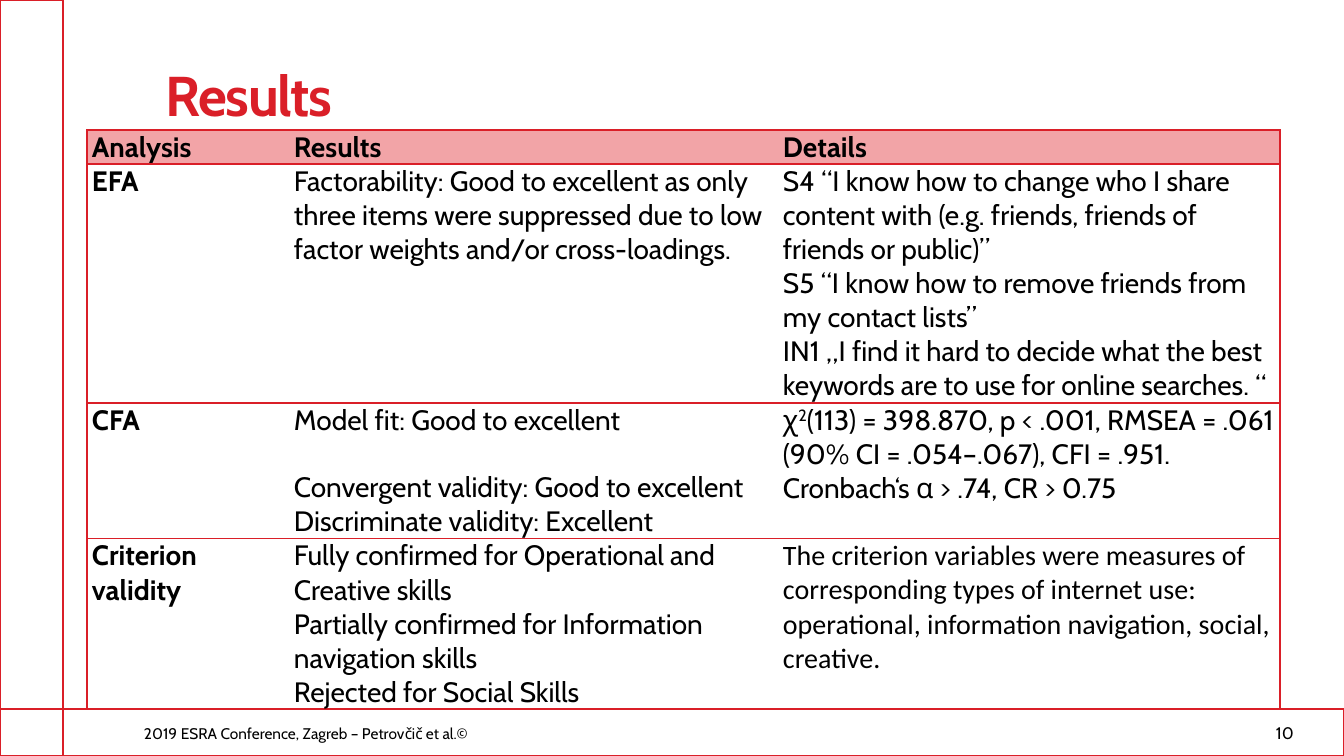
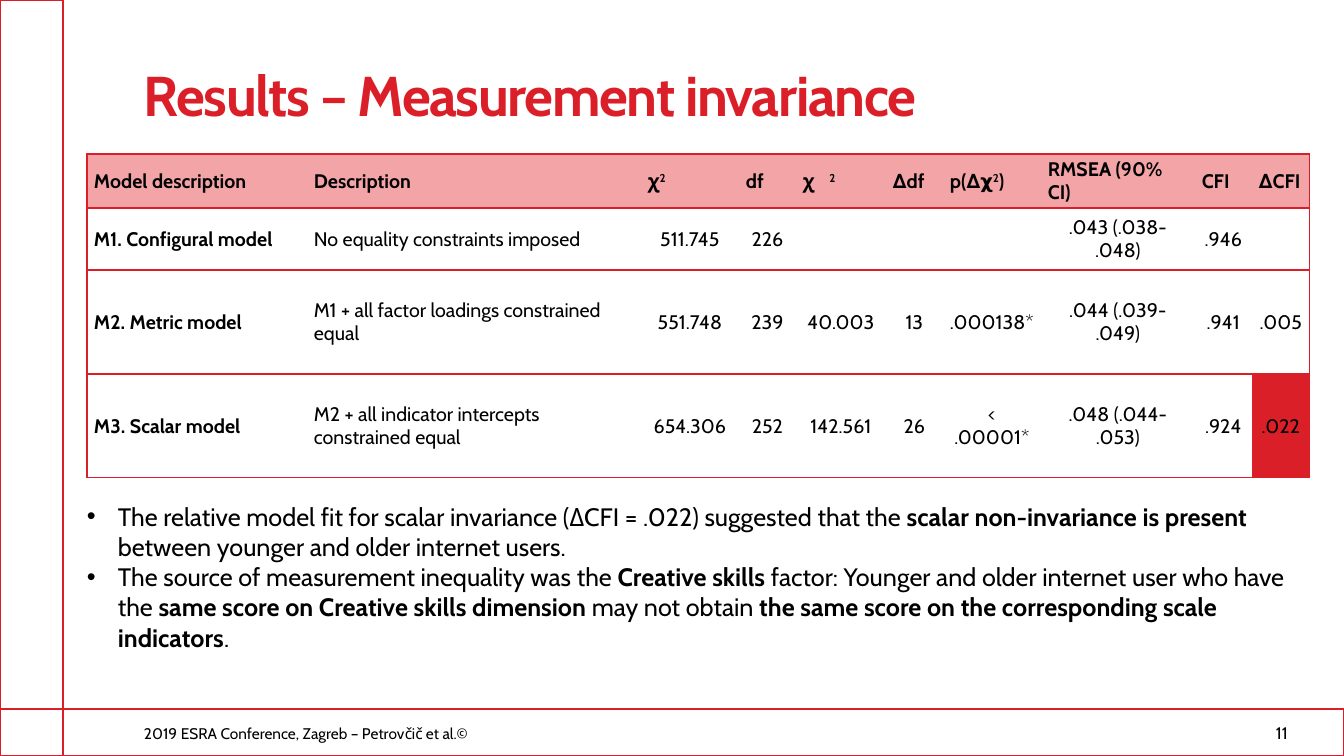
import lxml.etree
import pptx
import pptx.dml.color
import pptx.enum.shapes
import pptx.enum.text
import pptx.oxml.ns
import pptx.util

RED, PINK, BLACK = "DA1F28", "F2A4A7", "000000"
FOOTER = "2019 ESRA Conference, Zagreb – Petrovčič et al.©"
NO_STYLE = "{2D5ABB26-0587-4C30-8999-92F81FD0307C}"
EMU_PER_PX = 914400 / 100.8

hex_color = pptx.dml.color.RGBColor.from_string
qn = pptx.oxml.ns.qn
Pt = pptx.util.Pt
ALIGN = pptx.enum.text.PP_ALIGN
ANCHOR = pptx.enum.text.MSO_ANCHOR


def px(*lengths):
    return [pptx.util.Emu(round(length * EMU_PER_PX)) for length in lengths]


def write(frame, text, color=BLACK, align=ALIGN.LEFT, spacing=0, **font_values):
    """Fill a frame, one paragraph a line; _ toggles bold and ^ toggles superscript."""
    frame.word_wrap = True
    values = {"name": "Cabin", "bold": False} | font_values
    for number, line in enumerate(text.split("\n")):
        paragraph = frame.add_paragraph() if number else frame.paragraphs[0]
        paragraph.alignment = align
        for i, part in enumerate(line.split("_")):
            for j, piece in enumerate(part.split("^")):
                if not piece:
                    continue
                run = paragraph.add_run()
                run.text = piece
                for name, value in values.items():
                    setattr(run.font, name, value)
                run.font.bold = values["bold"] or i % 2 == 1
                run.font.color.rgb = hex_color(color)
                properties = run._r.get_or_add_rPr()
                if j % 2:
                    properties.set("baseline", "30000")
                if spacing:
                    properties.set("spc", str(spacing))


validity_rows = [
    ["Analysis", "Results", "Details"],
    ["EFA",
     "Factorability: Good to excellent as only three items were suppressed due to low "
     "factor weights and/or cross-loadings.",
     "S4 “I know how to change who I share content with (e.g. friends, friends of "
     "friends or public)”\n"
     "S5 “I know how to remove friends from my contact lists”\n"
     "IN1 „I find it hard to decide what the best keywords are to use for online searches. “"],
    ["CFA",
     "Model fit: Good to excellent\n"
     "Convergent validity: Good to excellent\n"
     "Discriminate validity: Excellent",
     "χ^2^(113) = 398.870, p < .001, RMSEA = .061 (90% CI = .054–.067), CFI = .951.\n"
     "Cronbach‘s α > .74, CR > 0.75"],
    ["Criterion validity",
     "Fully confirmed for Operational and Creative skills\n"
     "Partially confirmed for Information navigation skills\n"
     "Rejected for Social Skills",
     "The criterion variables were measures of corresponding types of internet use: "
     "operational, information navigation, social, creative."],
]
invariance_rows = [
    ["Model description", "Description", "χ^2^", "df", "∆χ^2^", "∆df", "p(∆χ^2^)",
     "RMSEA (90% CI)", "CFI", "∆CFI"],
    ["M1. Configural model", "No equality constraints imposed", "511.745", "226",
     "", "", "", ".043 (.038-.048)", ".946", ""],
    ["M2. Metric model", "M1 + all factor loadings constrained equal", "551.748", "239",
     "40.003", "13", ".000138*", ".044 (.039-.049)", ".941", ".005"],
    ["M3. Scalar model", "M2 + all indicator intercepts constrained equal", "654.306", "252",
     "142.561", "26", "< .00001*", ".048 (.044-.053)", ".924", ".022"],
]
findings = (
    "The relative model fit for scalar invariance (ΔCFI = .022) suggested that the "
    "_scalar non-invariance is present_ between younger and older internet users.\n"
    "The source of measurement inequality was the _Creative skills_ factor: Younger and older "
    "internet user who have the _same score on Creative skills dimension_ may not obtain "
    "_the same score on the corresponding scale indicators_."
)
pages = [
    {"title": "Results", "title_left": 156, "number": "10", "rows": validity_rows,
     "corner": (87, 130), "widths": [202, 489, 502], "heights": [34, 239, 136, 171],
     "size": 20, "inset": 5, "body_anchor": ANCHOR.TOP, "fonts": {(3, 2): "Calibri"},
     "fills": {}, "gaps": {(2, 1): 24}},
    {"title": "Results – Measurement invariance", "title_left": 134, "number": "11",
     "rows": invariance_rows, "corner": (87, 154),
     "widths": [220, 334, 98, 57, 90, 57, 98, 154, 57, 58], "heights": [54, 62, 104, 104],
     "size": 14, "inset": 7, "body_anchor": ANCHOR.MIDDLE, "fonts": {},
     "fills": {(3, 9): RED}, "gaps": {}},
]

deck = pptx.Presentation()
deck.slide_width, deck.slide_height = px(1344, 756)

for page in pages:
    slide = deck.slides.add_slide(deck.slide_layouts[6])

    for band_box in [(0, 0, 63, 756), (0, 709, 1344, 47)]:
        band = slide.shapes.add_shape(pptx.enum.shapes.MSO_SHAPE.RECTANGLE, *px(*band_box))
        band.shadow.inherit = False
        band.fill.background()
        band.line.color.rgb = hex_color(RED)
        band.line.width = Pt(1.5)

    title = slide.shapes.add_textbox(*px(page["title_left"], 56, 1120, 101))
    write(title.text_frame, page["title"], RED, size=Pt(40), bold=True, spacing=-100)

    for box, text, size in [((134, 708, 817, 40), FOOTER, 11),
                            ((1266, 708, 68, 40), page["number"], 12)]:
        footer = slide.shapes.add_textbox(*px(*box))
        footer.text_frame.vertical_anchor = ANCHOR.BOTTOM
        write(footer.text_frame, text, size=Pt(size))

    rows, widths, heights = page["rows"], page["widths"], page["heights"]
    frame = slide.shapes.add_table(len(rows), len(widths),
                                   *px(*page["corner"], sum(widths), sum(heights)))
    table = frame.table
    table._tbl.tblPr.find(qn("a:tableStyleId")).text = NO_STYLE
    for column, width in zip(table.columns, px(*widths)):
        column.width = width
    for row, height in zip(table.rows, px(*heights)):
        row.height = height

    for r, row_texts in enumerate(rows):
        for c, text in enumerate(row_texts):
            cell = table.cell(r, c)
            cell.margin_left, cell.margin_right, cell.margin_top, cell.margin_bottom = px(
                page["inset"], page["inset"], 0, 0)
            cell.vertical_anchor = ANCHOR.MIDDLE if r == 0 else page["body_anchor"]
            write(cell.text_frame, text, size=Pt(page["size"]), bold=r == 0 or c == 0,
                  align=ALIGN.CENTER if r and c > 1 and len(widths) > 3 else ALIGN.LEFT,
                  name=page["fonts"].get((r, c), "Cabin"))
            if (r, c) in page["gaps"]:
                cell.text_frame.paragraphs[1].space_before = Pt(page["gaps"][r, c])

            edges = {"lnL": c == 0, "lnR": c == len(widths) - 1, "lnT": True, "lnB": True}
            for edge, shown in edges.items():
                if shown:
                    border = lxml.etree.SubElement(cell._tc.get_or_add_tcPr(), qn("a:" + edge),
                                                   w=str(Pt(0.94)))
                    paint = lxml.etree.SubElement(border, qn("a:solidFill"))
                    lxml.etree.SubElement(paint, qn("a:srgbClr"), val=RED)
            fill_color = PINK if r == 0 else page["fills"].get((r, c))
            if fill_color:
                cell.fill.solid()
                cell.fill.fore_color.rgb = hex_color(fill_color)
            else:
                cell.fill.background()

conclusions = deck.slides[1].shapes.add_textbox(*px(77, 496, 1233, 163))
write(conclusions.text_frame, findings, size=Pt(18))
[hanging] = px(31)
for paragraph in conclusions.text_frame.paragraphs:
    properties = paragraph._p.get_or_add_pPr()
    properties.set("marL", str(hanging))
    properties.set("indent", str(-hanging))
    lxml.etree.SubElement(properties, qn("a:buFont"), typeface="Arial")
    lxml.etree.SubElement(properties, qn("a:buChar"), char="•")

deck.save("out.pptx")
